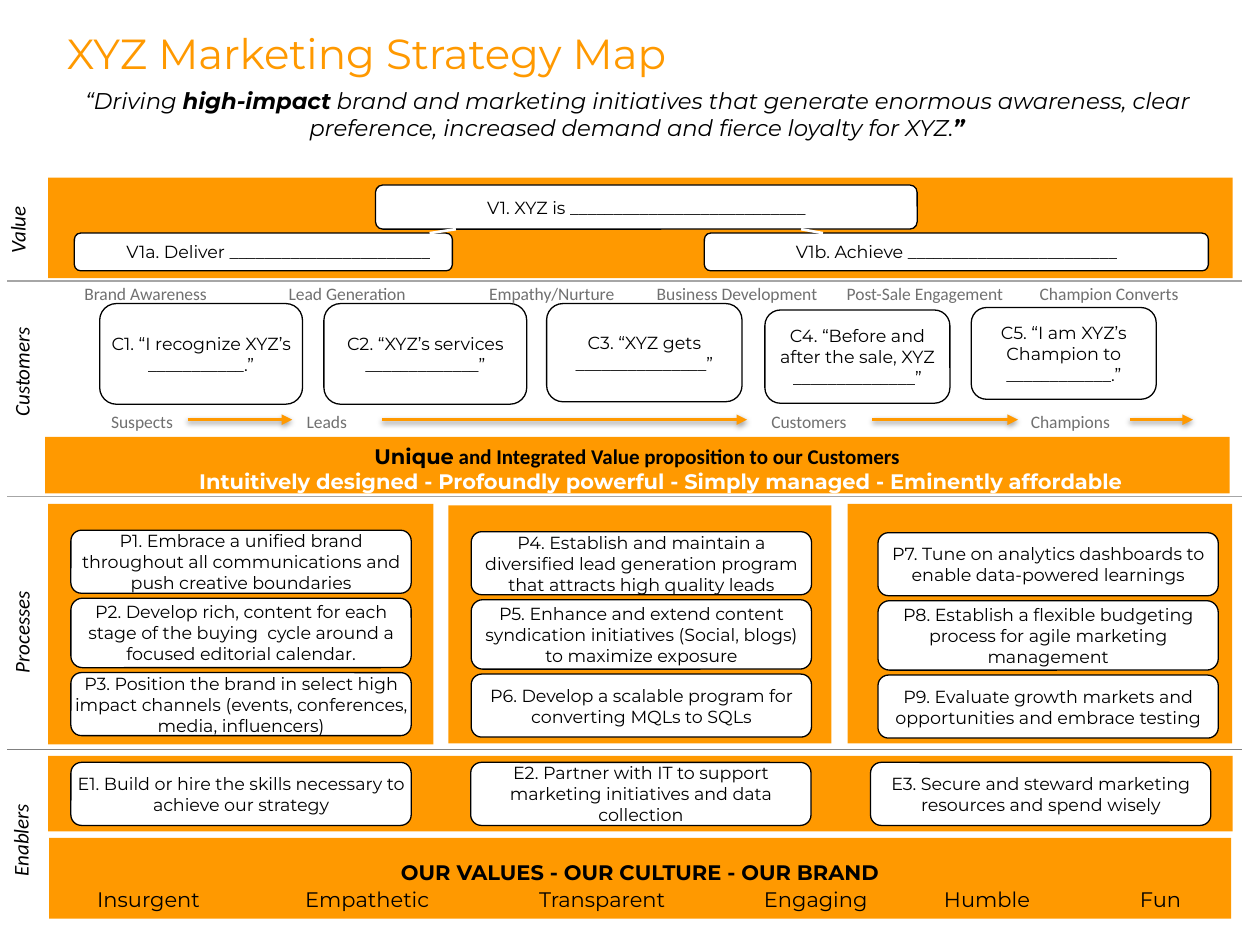
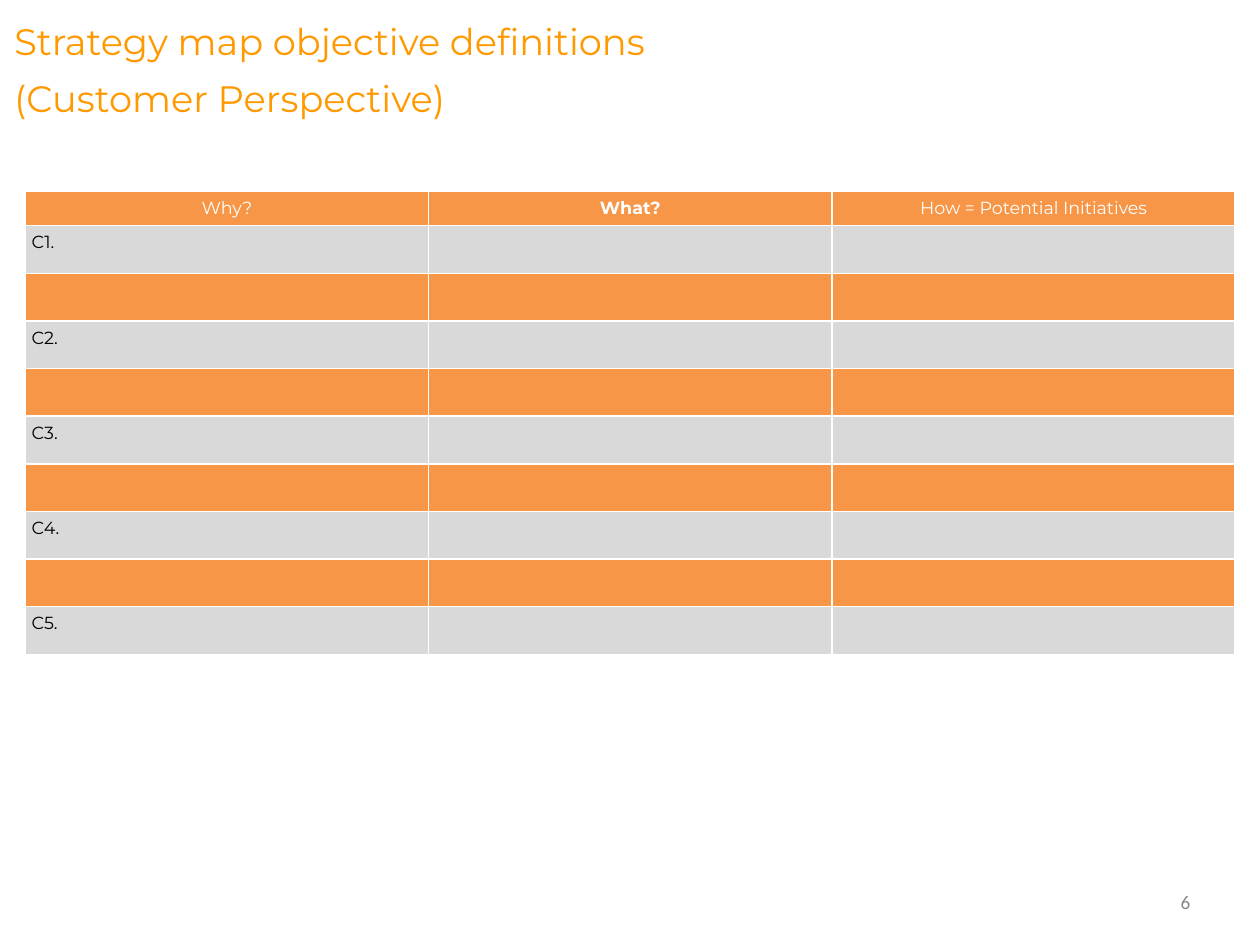
from lxml.etree import SubElement
from pptx import Presentation
from pptx.dml.color import RGBColor
from pptx.enum.shapes import MSO_CONNECTOR, MSO_SHAPE
from pptx.enum.text import MSO_ANCHOR, MSO_AUTO_SIZE, PP_ALIGN
from pptx.oxml.ns import qn
from pptx.util import Cm, Pt

ORANGE, BLACK, WHITE, GRAY = "FF9900", "000000", "FFFFFF", "707070"
HEAD, PALE = "F79646", "D9D9D9"
PAD = 0.13
CARD = 6.86
GAP = 0.1
BODY = dict(name="Montserrat", size=Pt(10), color=BLACK)
STRONG = dict(BODY, size=Pt(12), bold=True)
NOTE = dict(name="Calibri", size=Pt(10), color=GRAY)
SIDE = dict(name="Calibri", size=Pt(12), color=BLACK, italic=True)
MID = dict(alignment=PP_ALIGN.CENTER)
LEFT = dict(alignment=PP_ALIGN.LEFT)


def ink(code):
    return RGBColor.from_string(code)


def assign(item, values):
    for key, value in values.items():
        if key == "color":
            item.color.rgb = ink(value)
        else:
            setattr(item, key, value)


def write(shape, lines, look, para=MID, pad=0, anchor=MSO_ANCHOR.MIDDLE):
    frame = shape.text_frame
    edge = Cm(pad)
    assign(frame, dict(word_wrap=True, auto_size=MSO_AUTO_SIZE.NONE,
                       vertical_anchor=anchor, margin_left=edge,
                       margin_right=edge, margin_top=edge, margin_bottom=edge))
    for num, line in enumerate(lines):
        part = frame.paragraphs[0] if num == 0 else frame.add_paragraph()
        assign(part, para)
        for text, extra in [(line, {})] if isinstance(line, str) else line:
            run = part.add_run()
            run.text = text
            assign(run.font, {**look, **extra})
    return frame.paragraphs


def indent(part, size):
    part._p.get_or_add_pPr().set("marL", str(Cm(size)))


def label(slide, at, lines, look, para=LEFT, pad=PAD, anchor=MSO_ANCHOR.TOP):
    shape = slide.shapes.add_textbox(*map(Cm, at))
    write(shape, lines, look, para, pad, anchor)
    return shape


def block(slide, at, kind=MSO_SHAPE.RECTANGLE, fill=ORANGE):
    shape = slide.shapes.add_shape(kind, *map(Cm, at))
    shape.shadow.inherit = False
    shape.fill.solid()
    shape.fill.fore_color.rgb = ink(fill)
    shape.line.fill.background()
    return shape


def card(slide, at, text, pad=0):
    shape = block(slide, at, MSO_SHAPE.ROUNDED_RECTANGLE, WHITE)
    assign(shape.line, dict(color=BLACK, width=Pt(0.75)))
    return write(shape, [text], BODY, pad=pad)


def stroke(slide, ends, color, width):
    line = slide.shapes.add_connector(MSO_CONNECTOR.STRAIGHT, *map(Cm, ends))
    assign(line.line, dict(color=color, width=Pt(width)))
    return line, SubElement(line.element.spPr, qn("a:effectLst"))


def arrow(slide, ends):
    line, glow = stroke(slide, ends, ORANGE, 2)
    SubElement(line.element.spPr.find(qn("a:ln")), qn("a:tailEnd"), type="triangle")
    shade = SubElement(glow, qn("a:outerShdw"), blurRad=str(Pt(3)),
                       dist=str(Pt(1.6)), dir="5400000", rotWithShape="0")
    tint = SubElement(shade, qn("a:srgbClr"), val=BLACK)
    SubElement(tint, qn("a:alpha"), val="37000")


def heading(slide, at, lines, size, space):
    title = slide.shapes.title
    assign(title, dict(zip(("left", "top", "width", "height"), map(Cm, at))))
    look = dict(BODY, size=Pt(size), color=ORANGE)
    return write(title, lines, look, dict(LEFT, line_spacing=space), PAD, MSO_ANCHOR.TOP)


def value(slide, at):
    left, top = at[:2]
    block(slide, at)
    for x, y, wide, high, text, shift in [
        (6.6, 0.15, 10.92, 0.89, "V1. XYZ is ___________________________", 0),
        (0.53, 1.12, 7.62, 0.76, "V1a. Deliver _______________________", 0.6),
        (13.23, 1.12, 10.16, 0.76, "V1b. Achieve ________________________", 0),
    ]:
        indent(card(slide, (left + x, top + y, wide, high), text)[0], shift)
    for start, end in [(7.69, 8.22), (15.62, 15.18)]:
        stroke(slide, (left + start, top + 1.12, left + end, top + 1.04), WHITE, 1.5)


def customers(slide, at):
    left, top = at[:2]
    for x, wide, text in [
        (0.6, 2.92, "Brand Awareness"), (4.72, 2.92, "Lead Generation"),
        (8.76, 3.07, "Empathy/Nurture"), (12.14, 3.78, "Business Development"),
        (15.97, 3.76, "Post-Sale Engagement"), (19.86, 3.33, "Champion Converts"),
    ]:
        label(slide, (left + x, top, wide, 0.64), [text], NOTE)
    for x, y, wide, high, text in [
        (1.04, 0.54, 4.09, 2.03, "C1. “I recognize XYZ’s ___________.”"),
        (5.56, 0.54, 4.09, 2.03, "C2. “XYZ’s services _____________”"),
        (10.05, 0.54, 3.94, 1.98, "C3. “XYZ gets _______________”"),
        (14.45, 0.67, 3.73, 1.88, "C4. “Before and after the sale, XYZ ______________”"),
        (18.61, 0.62, 3.73, 1.85, "C5. “I am XYZ’s Champion to ____________.”"),
    ]:
        card(slide, (left + x, top + y, wide, high), text, GAP)
    for x, wide, text, start, end in [
        (1.14, 1.75, "Suspects", 2.81, 4.92), (5.08, 1.3, "Leads", 6.73, 14.09),
        (14.45, 2.03, "Customers", 16.61, 19.55), (19.68, 2.11, "Champions", 21.81, 23.08),
    ]:
        label(slide, (left + x, top + 2.57, wide, 0.64), [text], NOTE)
        arrow(slide, (left + start, top + 2.88, left + end, top + 2.88))


def promise(slide, at):
    lines = [
        [("Unique", {}),
         (" and Integrated Value proposition to our Customers", dict(name="Calibri"))],
        [("Intuitively designed - Profoundly powerful - Simply managed - "
          "Eminently affordable", dict(color=WHITE))],
    ]
    parts = write(block(slide, at), lines, STRONG, pad=PAD, anchor=MSO_ANCHOR.TOP)
    indent(parts[1], 0.96)


def process(slide, at, inset, texts):
    block(slide, at)
    left, top = at[0] + inset[0], at[1] + inset[1]
    for text, high in zip(texts, (1.27, 1.4, 1.27)):
        card(slide, (left, top, CARD, high), text)
        top += high + GAP


def enablers(slide, at):
    block(slide, at)
    for num, text in enumerate([
        "E1. Build or hire the skills necessary to achieve our strategy",
        "E2. Partner with IT to support marketing initiatives and data collection",
        "E3. Secure and steward marketing resources and spend wisely",
    ]):
        card(slide, (at[0] + 0.46 + 8.06 * num, at[1] + PAD, CARD, 1.27), text)


def culture(slide, at):
    words = ["Insurgent", "Empathetic", "Transparent", "Engaging", "Humble", "Fun"]
    lines = ["OUR VALUES - OUR CULTURE - OUR BRAND",
             [("".join("\t" + word for word in words), dict(bold=False))]]
    parts = write(block(slide, at), lines, STRONG, dict(MID, line_spacing=1.08),
                  PAD, MSO_ANCHOR.BOTTOM)
    parts[1].alignment = PP_ALIGN.LEFT
    tabs = SubElement(parts[1]._p.get_or_add_pPr(), qn("a:tabLst"))
    for stop in (0.84, 5.03, 9.75, 14.28, 17.91, 21.86):
        SubElement(tabs, qn("a:tab"), pos=str(Cm(stop)), algn="l")


def sides(slide):
    for text, x, y, wide in [("Value", 0.38, 4.58, 1.32), ("Customers", 0.46, 7.38, 2.29),
                             ("Processes", 0.46, 12.66, 2.08), ("Enablers", 0.44, 16.85, 1.9)]:
        shape = label(slide, (x - wide / 2, y - 0.37, wide, 0.74), [text], SIDE,
                      dict(LEFT, line_spacing=0.9), PAD, MSO_ANCHOR.MIDDLE)
        shape.rotation = 270


def strategy(slide):
    heading(slide, (1.22, 0.18, 22.07, 2.31), ["XYZ Marketing Strategy Map"], 24, 1.25)
    quote = [("“Driving ", {}), ("high-impact", dict(bold=True)),
             (" brand and marketing initiatives that generate enormous awareness, clear "
              "preference, increased demand and fierce loyalty for XYZ.", {}),
             ("”", dict(bold=True))]
    label(slide, (0.94, 1.75, 23.8, 1.07), [quote],
          dict(BODY, size=Pt(13), italic=True), MID, 0)
    value(slide, (0.97, 3.58, 23.88, 2.03))
    customers(slide, (0.97, 5.58, 23.88, 3.2))
    promise(slide, (0.91, 8.81, 23.88, 1.14))
    process(slide, (0.97, 10.16, 7.77, 4.85), (0.46, 0.53), [
        "P1. Embrace a unified brand throughout all communications and push creative boundaries",
        "P2. Develop rich, content for each stage of the buying  cycle around a focused "
        "editorial calendar.",
        "P3. Position the brand in select high impact channels (events, conferences, "
        "media, influencers)"])
    process(slide, (9.04, 10.19, 7.72, 4.8), (0.46, 0.53), [
        "P4. Establish and maintain a diversified lead generation program that attracts "
        "high quality leads",
        "P5. Enhance and extend content syndication initiatives (Social, blogs) to "
        "maximize exposure",
        "P6. Develop a scalable program for converting MQLs to SQLs"])
    process(slide, (17.09, 10.16, 7.75, 4.83), (0.61, 0.58), [
        "P7. Tune on analytics dashboards to enable data-powered learnings",
        "P8. Establish a flexible budgeting process for agile marketing management",
        "P9. Evaluate growth markets and opportunities and embrace testing"])
    enablers(slide, (0.97, 15.24, 23.88, 1.52))
    culture(slide, (0.99, 16.89, 23.83, 1.63))
    for y, color in [(5.66, "A6A6A6"), (10.01, "A6A6A6"), (15.11, "808080")]:
        stroke(slide, (0.15, y, 25.04, y), color, 1)
    sides(slide)


def grid(slide, at):
    heads = ["Why?", "What?", "How = Potential Initiatives"]
    rows = [heads] + [[f"C{num // 2 + 1}." if num % 2 == 0 else "", "", ""]
                      for num in range(9)]
    table = slide.shapes.add_table(len(rows), len(heads), *map(Cm, at)).table
    for col in table.columns:
        col.width = Cm(at[2] / len(heads))
    for y, row in enumerate(rows):
        table.rows[y].height = Cm(0.96 if y else 0.68)
        for x, text in enumerate(row):
            cell = table.cell(y, x)
            assign(cell, dict(margin_left=Cm(PAD), margin_right=Cm(PAD),
                              margin_top=Cm(PAD), margin_bottom=Cm(0 if y else PAD)))
            cell.fill.solid()
            cell.fill.fore_color.rgb = ink(PALE if y % 2 else HEAD)
            if text:
                part = cell.text_frame.paragraphs[0]
                part.alignment = PP_ALIGN.LEFT if y else PP_ALIGN.CENTER
                run = part.add_run()
                run.text = text
                assign(run.font, dict(BODY, color=BLACK if y else WHITE,
                                      bold=text == "What?"))


def goals(slide):
    parts = heading(slide, (0, 0, 22.07, 2.16), ["Strategy map objective definitions",
                                               "(Customer Perspective)"], 21, 1.29)
    indent(parts[0], 0.16)
    grid(slide, (0.51, 3.86, 24.39, 9.32))
    label(slide, (23.44, 17.83, 0.69, 0.69), ["6"],
          dict(NOTE, size=Pt(11), color="888888"),
          dict(alignment=PP_ALIGN.RIGHT), PAD, MSO_ANCHOR.MIDDLE)


def main():
    deck = Presentation()
    assign(deck, dict(slide_width=Cm(25.4), slide_height=Cm(19.05)))
    for build in (strategy, goals):
        build(deck.slides.add_slide(deck.slide_layouts[5]))
    deck.save("out.pptx")


if __name__ == "__main__":
    main()
